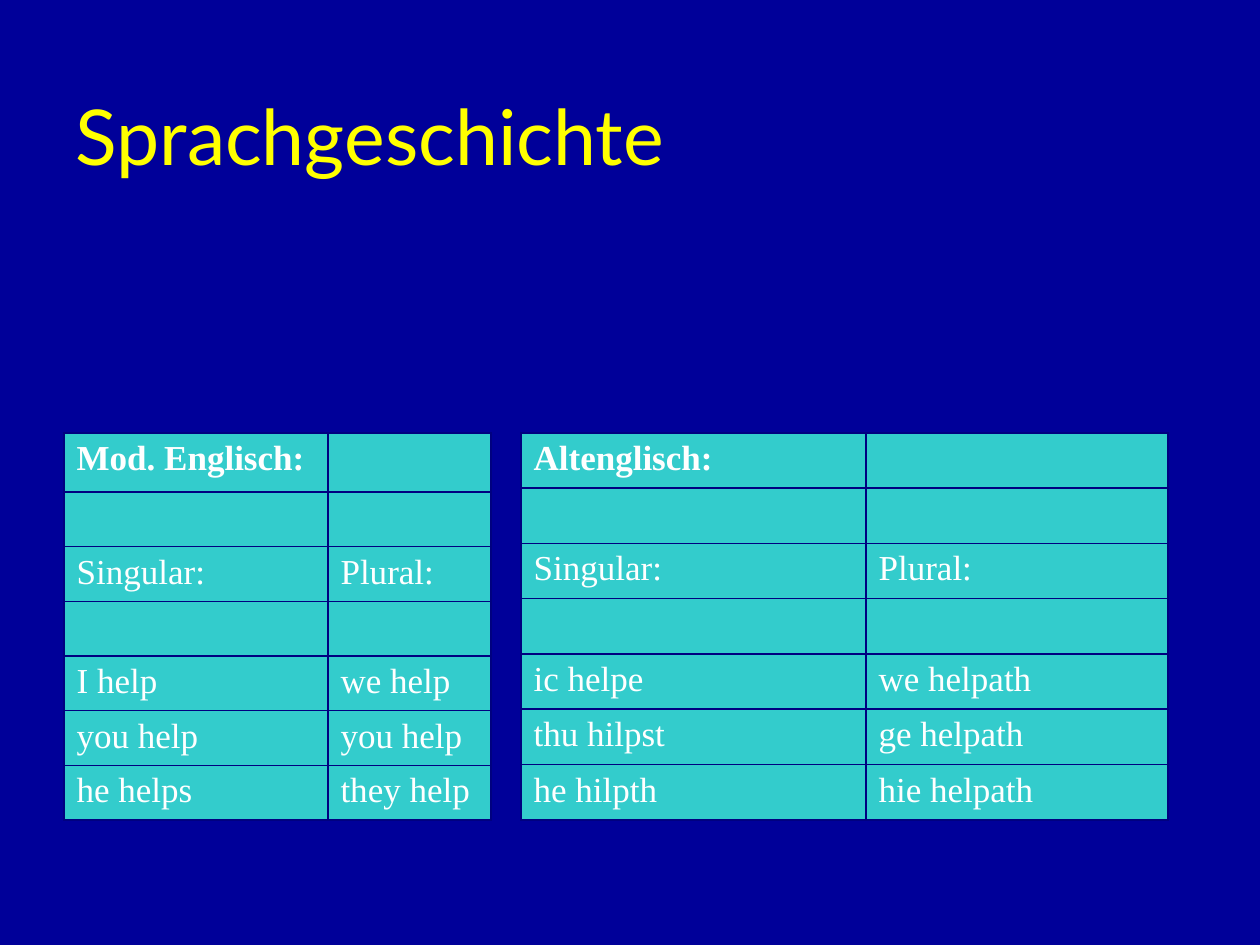
"""Build the slide on language history with its two verb tables."""
from dataclasses import dataclass

import lxml.etree
import pptx
import pptx.dml.color
import pptx.enum.text
import pptx.oxml.ns
import pptx.util


@dataclass(frozen=True)
class Theme:
    back: str = "000099"
    title: str = "FFFF00"
    text: str = "FFFFFF"
    cell: str = "33CCCC"
    rule: str = "000080"
    head_font: str = "Lato"
    body_font: str = "Times New Roman"
    head_size: int = 44
    body_size: int = 20
    rule_size: int = 1


class Deck:
    def __init__(self, theme):
        self.theme = theme
        self.show = pptx.Presentation()
        self.show.slide_width = self.px(1260)
        self.show.slide_height = self.px(945)
        self.slide = self.show.slides.add_slide(self.show.slide_layouts[5])
        self.paint(self.slide.background.fill, theme.back)

    def px(self, count):
        return pptx.util.Emu(round(count * 914400 / 126))

    def paint(self, fill, color):
        fill.solid()
        fill.fore_color.rgb = pptx.dml.color.RGBColor.from_string(color)

    def add_text(self, para, text, font, size, color, bold=False):
        run = para.add_run()
        run.text = text
        run.font.name = font
        run.font.size = pptx.util.Pt(size)
        run.font.bold = bold
        run.font.color.rgb = pptx.dml.color.RGBColor.from_string(color)

    def title(self, text, left, top, width, height):
        shape = self.slide.shapes.title
        shape.left, shape.top = self.px(left), self.px(top)
        shape.width, shape.height = self.px(width), self.px(height)
        frame = shape.text_frame
        frame.vertical_anchor = pptx.enum.text.MSO_ANCHOR.MIDDLE
        para = frame.paragraphs[0]
        para.alignment = pptx.enum.text.PP_ALIGN.LEFT
        look = self.theme
        self.add_text(para, text, look.head_font, look.head_size, look.title)

    def border(self, cell):
        props = cell._tc.get_or_add_tcPr()
        name = pptx.oxml.ns.qn
        width = str(pptx.util.Pt(self.theme.rule_size))
        for spot, side in enumerate(("a:lnL", "a:lnR", "a:lnT", "a:lnB")):
            line = lxml.etree.Element(name(side), w=width)
            fill = lxml.etree.SubElement(line, name("a:solidFill"))
            lxml.etree.SubElement(fill, name("a:srgbClr"), val=self.theme.rule)
            props.insert(spot, line)

    def table(self, rows, left, top, widths, height, first):
        grid = self.slide.shapes.add_table(
            len(rows), len(widths), self.px(left), self.px(top),
            self.px(sum(widths)), self.px(height)).table
        for col, width in zip(grid.columns, widths):
            col.width = self.px(width)
        rest = (height - first) / (len(rows) - 1)
        look = self.theme
        for r, texts in enumerate(rows):
            grid.rows[r].height = self.px(rest if r else first)
            for c, text in enumerate(texts):
                cell = grid.cell(r, c)
                self.paint(cell.fill, look.cell)
                self.border(cell)
                if text:
                    self.add_text(cell.text_frame.paragraphs[0], text,
                                  look.body_font, look.body_size, look.text, r == 0)


MODERN = [
    ("Mod. Englisch:", ""),
    ("", ""),
    ("Singular:", "Plural:"),
    ("", ""),
    ("I help", "we help"),
    ("you help", "you help"),
    ("he helps", "they help"),
]
OLD = [
    ("Altenglisch:", ""),
    ("", ""),
    ("Singular:", "Plural:"),
    ("", ""),
    ("ic helpe", "we helpath"),
    ("thu hilpst", "ge helpath"),
    ("he hilpth", "hie helpath"),
]


def main():
    deck = Deck(Theme())
    deck.title("Sprachgeschichte", 63, 40, 1134, 190)
    deck.table(MODERN, 64, 433, (264, 163), 387, 59)
    deck.table(OLD, 521, 433, (345, 302), 387, 55)
    deck.show.save("out.pptx")


if __name__ == "__main__":
    main()
